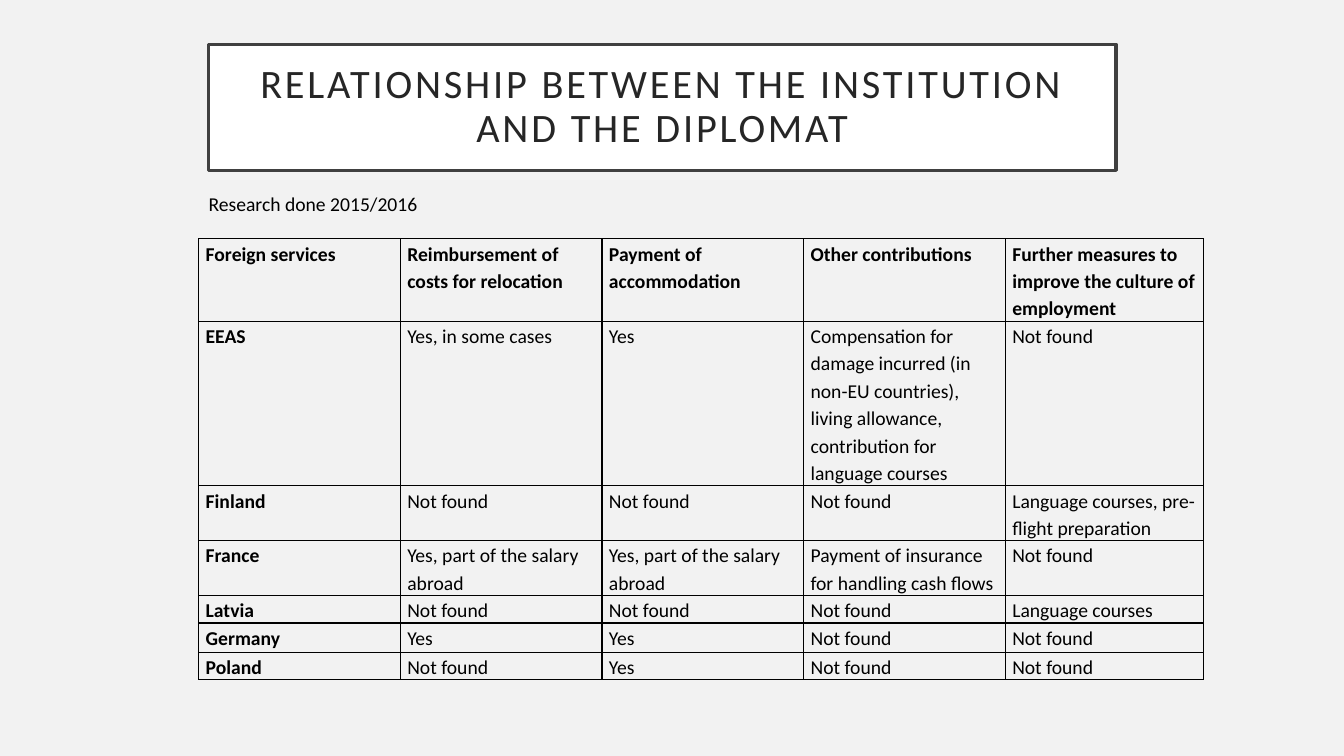
from dataclasses import astuple, dataclass

from lxml.etree import SubElement
from pptx import Presentation
from pptx.dml.color import RGBColor
from pptx.enum.shapes import MSO_SHAPE as Preset
from pptx.enum.text import MSO_ANCHOR as Anchor, PP_ALIGN as Align
from pptx.oxml.ns import qn
from pptx.util import Inches, Pt

FONT = "Calibri"
BLACK = "000000"


@dataclass
class ForeignService:
    name: str
    relocation: str
    accommodation: str
    contributions: str
    measures: str


HEADINGS = ForeignService(
    "Foreign services", "Reimbursement of costs for relocation",
    "Payment of accommodation", "Other contributions",
    "Further measures to improve the culture of employment")
SERVICES = [
    ForeignService(
        "EEAS", "Yes, in some cases", "Yes",
        "Compensation for damage incurred (in non-EU countries), "
        "living allowance, contribution for language courses", "Not found"),
    ForeignService("Finland", "Not found", "Not found", "Not found",
                   "Language courses, pre-flight preparation"),
    ForeignService("France", "Yes, part of the salary abroad",
                   "Yes, part of the salary abroad",
                   "Payment of insurance for handling cash flows", "Not found"),
    ForeignService("Latvia", "Not found", "Not found", "Not found",
                   "Language courses"),
    ForeignService("Germany", "Yes", "Yes", "Not found", "Not found"),
    ForeignService("Poland", "Not found", "Yes", "Not found", "Not found"),
]
COLUMN_WIDTHS = [2, 2, 2, 2, 1.97]
ROW_HEIGHTS = [0.8, 1.61, 0.53, 0.49, 0.26, 0.29, 0.26]


def colour(value: str) -> RGBColor:
    return RGBColor.from_string(value)


def add_run(paragraph, text: str, size: float = 14, ink: str = BLACK,
            bold: bool = False):
    run = paragraph.add_run()
    run.text = text
    run.font.name = FONT
    run.font.size = Pt(size)
    run.font.bold = bold
    run.font.color.rgb = colour(ink)
    return run


def add_borders(cell, ink: str, width: float) -> None:
    properties = cell._tc.get_or_add_tcPr()
    for position, side in enumerate(("lnL", "lnR", "lnT", "lnB")):
        border = SubElement(properties, qn(f"a:{side}"), w=str(Pt(width)))
        fill = SubElement(border, qn("a:solidFill"))
        SubElement(fill, qn("a:srgbClr"), val=ink)
        properties.insert(position, border)


def fill_cell(cell, text: str, bold: bool) -> None:
    cell.margin_left = cell.margin_right = Inches(0.07)
    cell.margin_top = cell.margin_bottom = 0
    cell.fill.background()
    add_borders(cell, BLACK, 1)
    paragraph = cell.text_frame.paragraphs[0]
    paragraph.line_spacing = 1.15
    paragraph.space_after = Pt(10)
    add_run(paragraph, text, bold=bold)


def add_title(slide) -> None:
    title = slide.shapes.add_shape(Preset.RECTANGLE, Inches(2.07), Inches(0.44),
                                   Inches(9), Inches(1.25))
    title.shadow.inherit = False
    title.fill.solid()
    title.fill.fore_color.rgb = colour("FFFFFF")
    title.line.color.rgb = colour("404040")
    title.line.width = Pt(2.5)
    frame = title.text_frame
    frame.word_wrap = True
    frame.vertical_anchor = Anchor.MIDDLE
    frame.margin_left = frame.margin_right = Inches(0.2)
    frame.margin_top = frame.margin_bottom = Inches(0.2)
    heading = frame.paragraphs[0]
    heading.alignment = Align.CENTER
    heading.line_spacing = 0.9
    run = add_run(heading, "RELATIONSHIP BETWEEN THE INSTITUTION AND THE DIPLOMAT",
                  28.8, "262626")
    run._r.get_or_add_rPr().set("spc", "200")


def add_services_table(slide) -> None:
    rows = [HEADINGS, *SERVICES]
    table = slide.shapes.add_table(
        len(rows), len(COLUMN_WIDTHS), Inches(1.97), Inches(2.37),
        Inches(sum(COLUMN_WIDTHS)), Inches(sum(ROW_HEIGHTS))).table
    table.first_row = table.horz_banding = False
    for column, width in zip(table.columns, COLUMN_WIDTHS):
        column.width = Inches(width)
    for r, (service, height) in enumerate(zip(rows, ROW_HEIGHTS)):
        table.rows[r].height = Inches(height)
        for c, text in enumerate(astuple(service)):
            fill_cell(table.cell(r, c), text, bold=r == 0 or c == 0)


def add_research_note(slide) -> None:
    note = slide.shapes.add_textbox(Inches(1.97), Inches(1.86),
                                    Inches(4.15), Inches(0.34))
    note.text_frame.word_wrap = True
    add_run(note.text_frame.paragraphs[0], "Research done 2015/2016")


def main() -> None:
    deck = Presentation()
    deck.slide_width, deck.slide_height = Inches(13.33), Inches(7.5)
    slide = deck.slides.add_slide(deck.slide_layouts[6])

    # Background
    slide.background.fill.solid()
    slide.background.fill.fore_color.rgb = colour("F2F2F2")

    # Content
    add_title(slide)
    add_services_table(slide)
    add_research_note(slide)
    deck.save("out.pptx")


if __name__ == "__main__":
    main()
